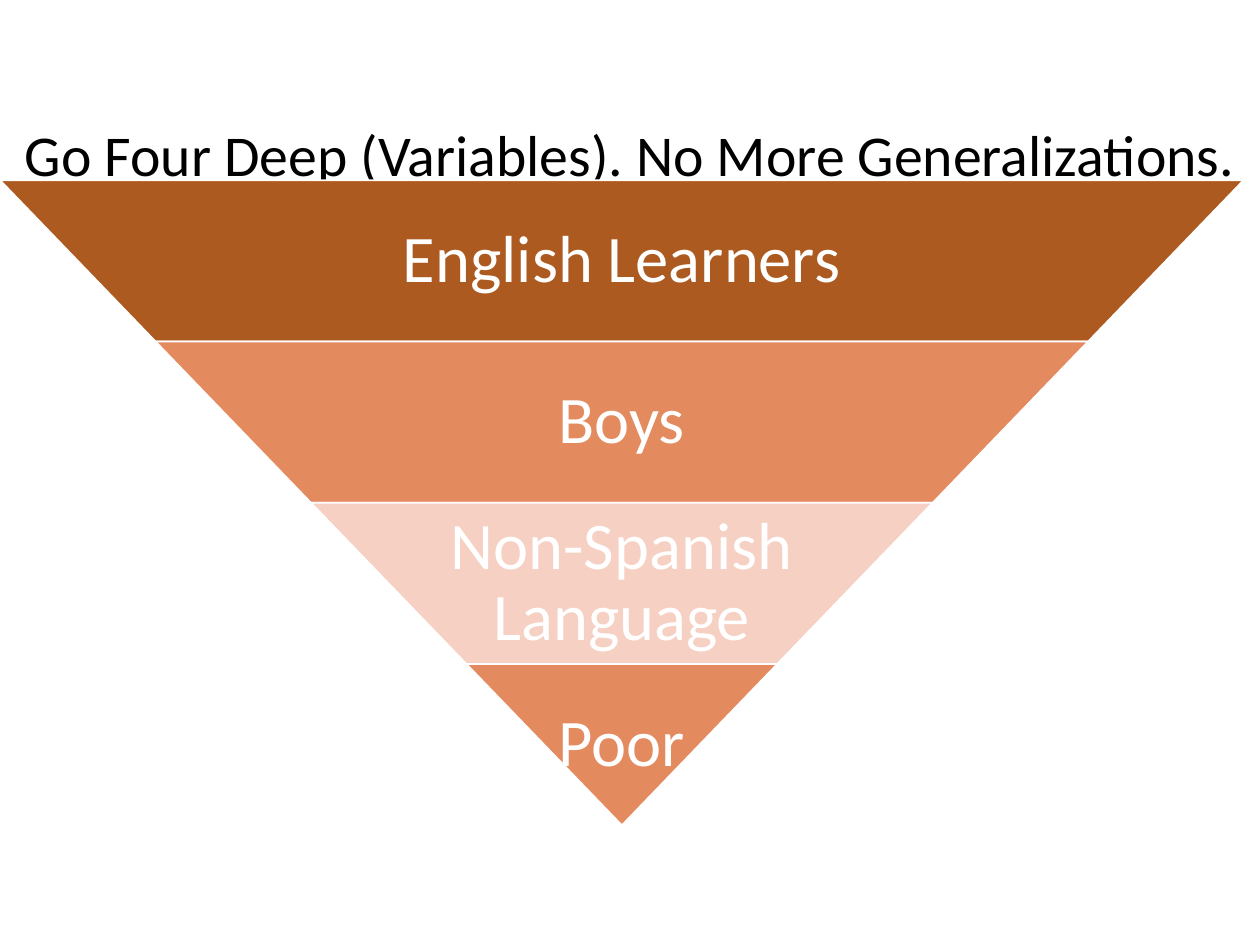
from dataclasses import dataclass

from pptx import Presentation
from pptx.dml.color import RGBColor
from pptx.enum.shapes import MSO_SHAPE as Shape
from pptx.enum.text import MSO_ANCHOR as Anchor, MSO_AUTO_SIZE as AutoSize, PP_ALIGN as Align
from pptx.slide import Slide
from pptx.util import Inches, Pt

SLIDE_W, SLIDE_H = 10, 7.5
FONT = "Calibri"

# Inverted pyramid: equal tiers, each one step narrower on both sides
PYRAMID_TOP, PYRAMID_W = 1.43, 9.87
TIER_H = 1.28


@dataclass
class Tier:
    label: str
    fill: str
    label_share: float = 0.65  # label width as a share of the tier's width


TIERS = [
    Tier("English Learners", "AC5A20"),
    Tier("Boys", "E48A5F"),
    Tier("Non-Spanish Language", "F6D0C3"),
    Tier("Poor", "E48A5F", 1),
]
STEP = PYRAMID_W / (2 * len(TIERS))


def color(hex_code: str) -> RGBColor:
    return RGBColor.from_string(hex_code)


def set_text(frame, text: str, size: float, hex_code: str) -> None:
    frame.text = text
    frame.word_wrap = True
    frame.auto_size = AutoSize.NONE
    frame.vertical_anchor = Anchor.MIDDLE
    paragraph = frame.paragraphs[0]
    paragraph.alignment = Align.CENTER
    paragraph.font.name = FONT
    paragraph.font.size = Pt(size)
    paragraph.font.color.rgb = color(hex_code)


def add_title(slide: Slide, text: str) -> None:
    title = slide.shapes.title
    title.left, title.top = Inches(0), Inches(SLIDE_H * 0.1)
    title.width, title.height = Inches(SLIDE_W), Inches(SLIDE_H * 0.125)
    set_text(title.text_frame, text, 33, "000000")


def add_tier(slide: Slide, row: int, tier: Tier) -> None:
    top = PYRAMID_TOP + row * TIER_H
    width = PYRAMID_W - 2 * row * STEP

    # Band, turned so that its wide side is on top
    band = slide.shapes.add_shape(
        Shape.TRAPEZOID, Inches(row * STEP), Inches(top), Inches(width), Inches(TIER_H))
    band.adjustments[0] = STEP / TIER_H
    band.rotation = 180
    band.shadow.inherit = False
    band.fill.solid()
    band.fill.fore_color.rgb = color(tier.fill)
    band.line.color.rgb = color("FFFFFF")
    band.line.width = Pt(1)

    # Upright label, centred on the band
    label_w = width * tier.label_share
    label = slide.shapes.add_textbox(
        Inches((PYRAMID_W - label_w) / 2), Inches(top), Inches(label_w), Inches(TIER_H))
    frame = label.text_frame
    frame.margin_left = frame.margin_right = Inches(0.05)
    frame.margin_top = frame.margin_bottom = Inches(0.05)
    set_text(frame, tier.label, 38, "FFFFFF")
    frame.paragraphs[0].line_spacing = 0.9


def main() -> None:
    deck = Presentation()
    deck.slide_width, deck.slide_height = Inches(SLIDE_W), Inches(SLIDE_H)
    slide = deck.slides.add_slide(deck.slide_layouts[5])  # title only
    add_title(slide, "Go Four Deep (Variables). No More Generalizations.")
    for row, tier in enumerate(TIERS):
        add_tier(slide, row, tier)
    deck.save("out.pptx")


if __name__ == "__main__":
    main()
